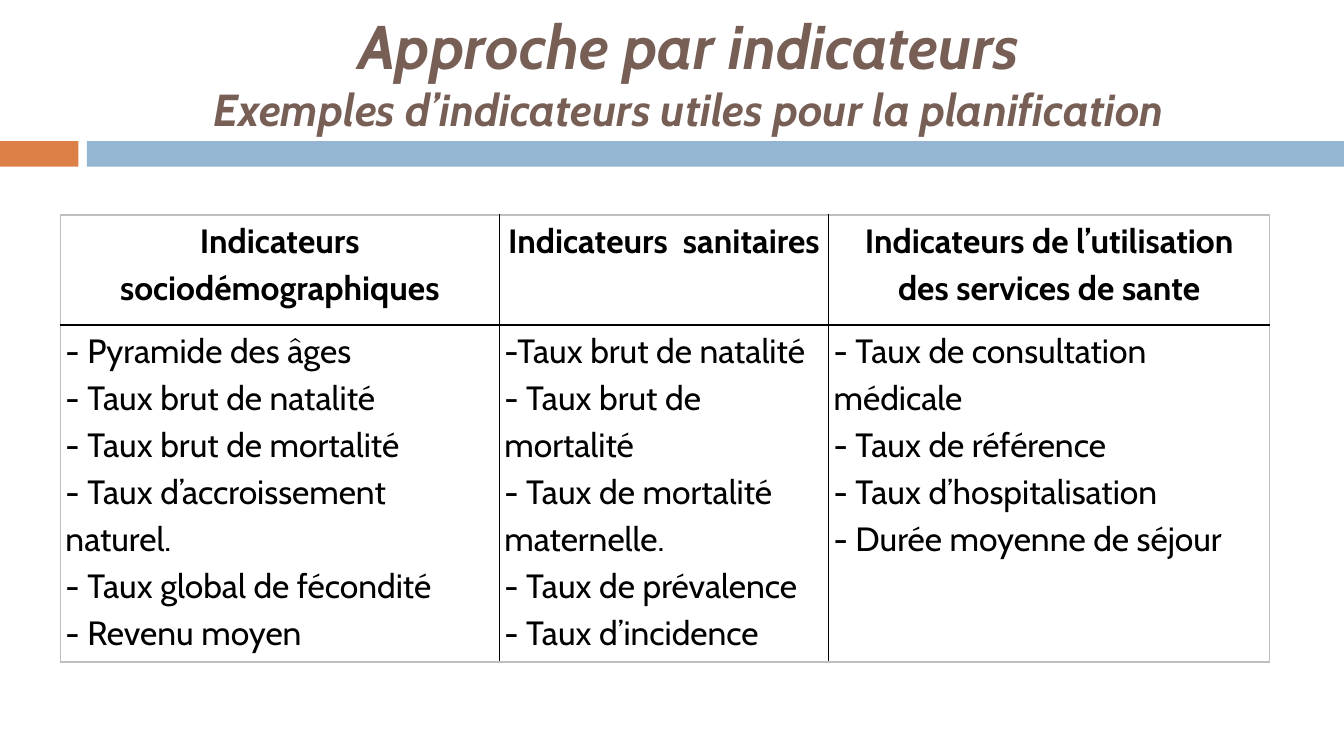
from lxml import etree
from pptx import Presentation
from pptx import util as u
from pptx.dml import color
from pptx.enum import shapes, text
from pptx.oxml import ns

BLACK, GREY, BROWN, ORANGE, BLUE = "000000", "BFBFBF", "775F55", "DD8047", "94B6D2"
COLUMNS = [
    (11.06, ["Indicateurs sociodémographiques"],
     ["- Pyramide des âges", "- Taux brut de natalité", "- Taux brut de mortalité",
      "- Taux d’accroissement naturel.", "- Taux global de fécondité", "- Revenu moyen"]),
    (8.3, ["Indicateurs  sanitaires"],
     ["-Taux brut de natalité", "- Taux brut de mortalité", "- Taux de mortalité maternelle.",
      "- Taux de prévalence", "- Taux d’incidence"]),
    (11.12, ["Indicateurs de l’utilisation", "des services de sante"],
     ["- Taux de consultation médicale", "- Taux de référence", "- Taux d’hospitalisation",
      "- Durée moyenne de séjour"]),
]
ROW_HEIGHTS = (2.77, 8.49)


def rgb(value):
    return color.RGBColor.from_string(value)


def apply(target, values):
    for name, value in values.items():
        setattr(target, name, value)


class IndicatorSlide:
    """Holds the style and the current slide, with a method for each kind of element."""

    font = "Cabin"

    def __init__(self, presentation):
        self.slide = presentation.slides.add_slide(presentation.slide_layouts[5])

    def run(self, paragraph, content, font_color, **values):
        run = paragraph.add_run()
        run.text = content
        apply(run.font, {"name": self.font, **values})
        run.font.color.rgb = rgb(font_color)

    def bar(self, left, top, width, height, fill):
        shape = self.slide.shapes.add_shape(
            shapes.MSO_SHAPE.RECTANGLE, *map(u.Cm, (left, top, width, height)))
        shape.shadow.inherit = False
        shape.fill.solid()
        shape.fill.fore_color.rgb = rgb(fill)
        shape.line.fill.background()

    def title(self, left, top, width, height, lines):
        shape = self.slide.shapes.title
        apply(shape, {"left": u.Cm(left), "top": u.Cm(top),
                      "width": u.Cm(width), "height": u.Cm(height)})
        apply(shape.text_frame, {"word_wrap": True, "auto_size": text.MSO_AUTO_SIZE.NONE,
                                 "vertical_anchor": text.MSO_ANCHOR.MIDDLE})
        paragraph = shape.text_frame.paragraphs[0]
        paragraph.alignment = text.PP_ALIGN.CENTER
        for index, (content, size) in enumerate(lines):
            if index:
                paragraph.add_line_break()
            self.run(paragraph, content, BROWN, size=u.Pt(size), bold=True, italic=True)

    def borders(self, cell, edges):
        properties = cell._tc.get_or_add_tcPr()
        for side, line_color in edges.items():
            line = etree.SubElement(properties, ns.qn(f"a:ln{side}"), w=str(u.Pt(1)))
            fill = etree.SubElement(line, ns.qn("a:solidFill"))
            etree.SubElement(fill, ns.qn("a:srgbClr"), val=line_color)

    def cell(self, cell, lines, header):
        apply(cell, {"margin_left": u.Cm(0.13), "margin_right": u.Cm(0.13),
                     "margin_top": 0, "margin_bottom": 0})
        cell.fill.background()
        frame = cell.text_frame
        for index, content in enumerate(lines):
            paragraph = frame.add_paragraph() if index else frame.paragraphs[0]
            apply(paragraph, {"line_spacing": 1.15, "alignment":
                              text.PP_ALIGN.CENTER if header else text.PP_ALIGN.LEFT})
            self.run(paragraph, content, BLACK, size=u.Pt(24), bold=header)

    def table(self, left, top, columns, heights):
        width = sum(column[0] for column in columns)
        table = self.slide.shapes.add_table(
            len(heights), len(columns),
            *map(u.Cm, (left, top, width, sum(heights)))).table
        apply(table, {"first_row": False, "horz_banding": False})
        for row, height in zip(table.rows, heights):
            row.height = u.Cm(height)
        last_column, last_row = len(columns) - 1, len(heights) - 1
        for x, (column_width, *contents) in enumerate(columns):
            table.columns[x].width = u.Cm(column_width)
            for y, lines in enumerate(contents):
                cell = table.cell(y, x)
                self.borders(cell, {"L": BLACK if x else GREY,
                                    "R": BLACK if x < last_column else GREY,
                                    "T": BLACK if y else GREY,
                                    "B": BLACK if y < last_row else GREY})
                self.cell(cell, lines, header=y == 0)


def main():
    presentation = Presentation()
    apply(presentation, {"slide_width": u.Cm(33.87), "slide_height": u.Cm(19.05)})
    page = IndicatorSlide(presentation)
    page.bar(0, 3.56, 1.98, 0.64, ORANGE)
    page.bar(2.19, 3.56, 31.68, 0.64, BLUE)
    page.title(2.26, 0, 30.2, 3.6, [
        ("Approche par indicateurs", 44),
        ("Exemples d’indicateurs utiles pour la planification", 32)])
    page.table(1.52, 5.42, COLUMNS, ROW_HEIGHTS)
    presentation.save("out.pptx")


if __name__ == "__main__":
    main()
